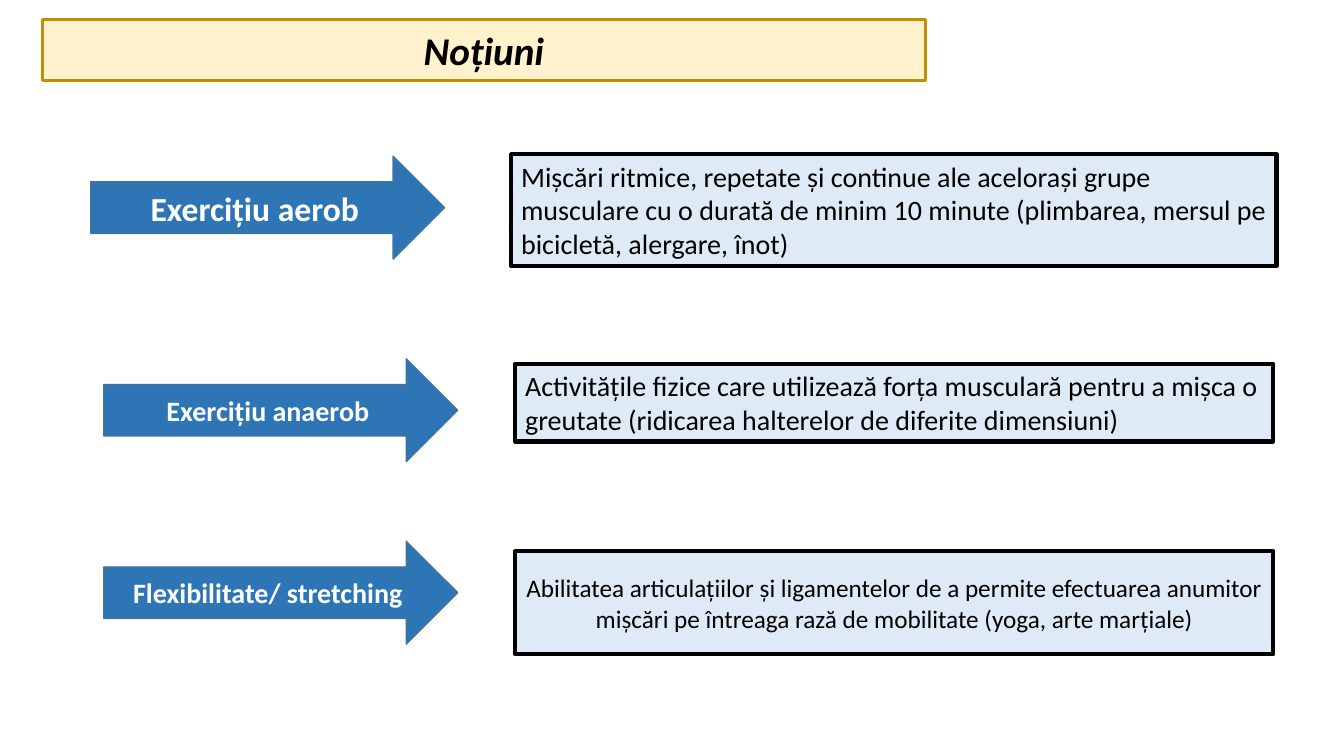
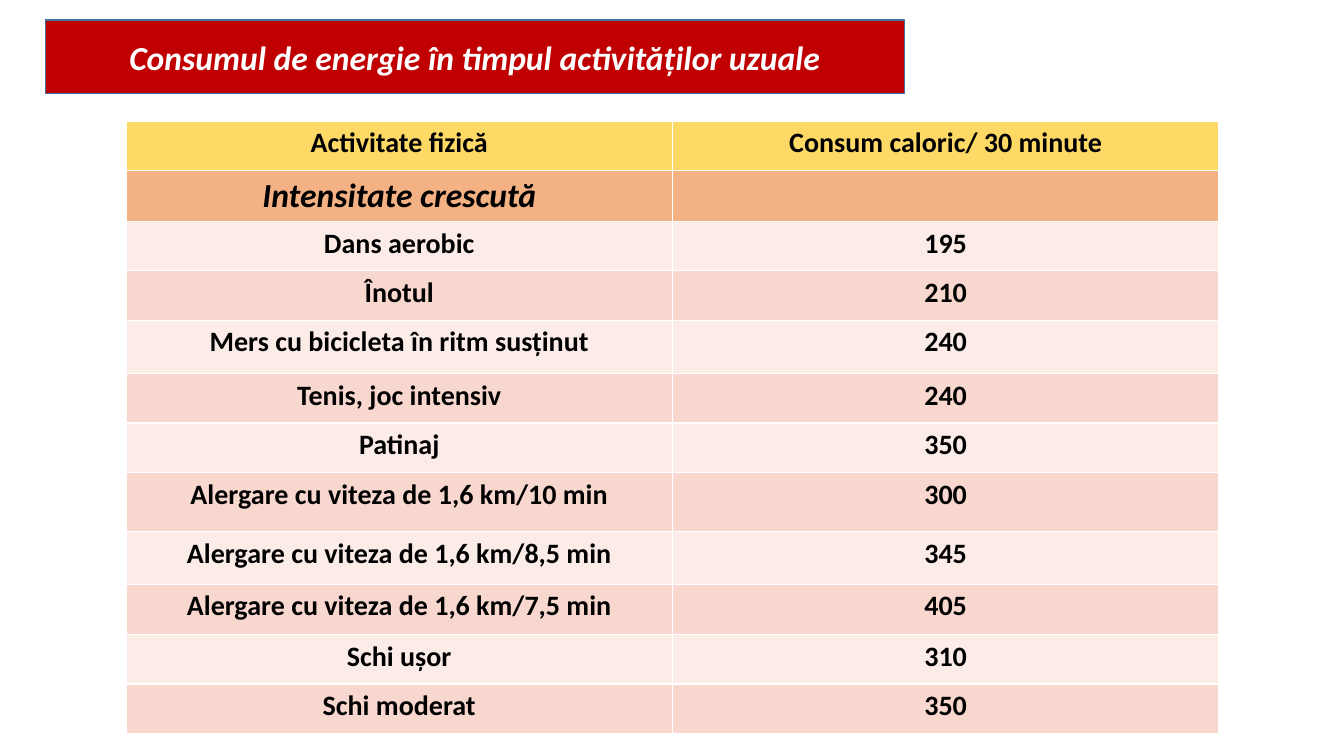
from lxml import etree
from pptx import Presentation
from pptx.dml.color import RGBColor
from pptx.enum.shapes import MSO_SHAPE
from pptx.enum.text import MSO_ANCHOR, MSO_AUTO_SIZE, PP_ALIGN
from pptx.oxml.ns import qn
from pptx.util import Pt

PX = 9144
FONT = "Calibri"
ARROW, RECT = MSO_SHAPE.RIGHT_ARROW, MSO_SHAPE.RECTANGLE
TOP, MIDDLE = MSO_ANCHOR.TOP, MSO_ANCHOR.MIDDLE
LEFT, CENTER = PP_ALIGN.LEFT, PP_ALIGN.CENTER
FIXED = MSO_AUTO_SIZE.NONE

BLACK = RGBColor(0x00, 0x00, 0x00)
WHITE = RGBColor(0xFF, 0xFF, 0xFF)
BLUE = RGBColor(0x2E, 0x75, 0xB6)
EDGE = RGBColor(0x43, 0x73, 0x9E)
PALE = RGBColor(0xDE, 0xEB, 0xF7)
CREAM = RGBColor(0xFF, 0xF2, 0xCC)
GOLD = RGBColor(0xBF, 0x90, 0x00)
RED = RGBColor(0xC0, 0x00, 0x00)
YELLOW = RGBColor(0xFF, 0xD9, 0x66)
ORANGE = RGBColor(0xF4, 0xB1, 0x83)
LIGHT = RGBColor(0xFC, 0xEC, 0xE8)
ROSE = RGBColor(0xF8, 0xD7, 0xCE)


def write(frame, text, size, color, align=CENTER, bold=True, italic=False):
    frame.text = text
    para = frame.paragraphs[0]
    para.alignment = align
    font = para.font
    font.name, font.size, font.bold, font.italic = FONT, Pt(size), bold, italic
    font.color.rgb = color


def style(shape, fill, line, width, anchor=MIDDLE):
    shape.fill.solid()
    shape.fill.fore_color.rgb = fill
    shape.line.color.rgb = line
    shape.line.width = Pt(width)
    shape.shadow.inherit = False
    frame = shape.text_frame
    frame.word_wrap = True
    frame.auto_size = FIXED
    frame.vertical_anchor = anchor


deck = Presentation()
deck.slide_width, deck.slide_height = 1333 * PX, 750 * PX

titles = [
    ("Noțiuni", (42, 19, 876, 61), 28, BLACK, CREAM, GOLD, 2.25),
    ("Consumul de energie în timpul activităților uzuale",
     (45, 20, 852, 73), 24, WHITE, RED, EDGE, 1),
]
slides = []
for text, place, size, color, fill, line, width in titles:
    slide = deck.slides.add_slide(deck.slide_layouts[5])
    title = slide.shapes.title
    title.left, title.top, title.width, title.height = [n * PX for n in place]
    geom = etree.Element(qn("a:prstGeom"), prst="roundRect")
    etree.SubElement(geom, qn("a:avLst"))
    title.element.spPr.insert(1, geom)
    style(title, fill, line, width)
    write(title.text_frame, text, size, color, italic=True)
    slides.append(slide)
terms, energy = slides

pairs = [
    ("Exercițiu aerob", 24, (90, 155),
     "Mișcări ritmice, repetate și continue ale acelorași grupe musculare cu o "
     "durată de minim 10 minute (plimbarea, mersul pe bicicletă, alergare, înot)",
     20, (507, 153, 759, 111), LEFT, TOP),
    ("Exercițiu anaerob", 20, (103, 356),
     "Activitățile fizice care utilizează forța musculară pentru a mișca o "
     "greutate (ridicarea halterelor de diferite dimensiuni)",
     20, (511, 361, 752, 77), LEFT, TOP),
    ("Flexibilitate/ stretching", 20, (103, 537),
     "Abilitatea articulațiilor și ligamentelor de a permite efectuarea anumitor "
     "mișcări pe întreaga rază de mobilitate (yoga, arte marțiale)",
     18, (511, 547, 752, 102), CENTER, MIDDLE),
]
for name, big, spot, text, size, place, align, anchor in pairs:
    arrow = terms.shapes.add_shape(ARROW, *[n * PX for n in (*spot, 351, 102)])
    style(arrow, BLUE, EDGE, 1)
    write(arrow.text_frame, name, big, WHITE)
    box = terms.shapes.add_shape(RECT, *[n * PX for n in place])
    style(box, PALE, BLACK, 3, anchor)
    write(box.text_frame, text, size, BLACK, align, bold=False)

rows = [
    ("Activitate fizică", "Consum caloric/ 30 minute", 49),
    ("Intensitate crescută", "", 49),
    ("Dans aerobic", "195", 49),
    ("Înotul", "210", 49),
    ("Mers cu bicicleta în ritm susținut", "240", 53),
    ("Tenis, joc intensiv", "240", 49),
    ("Patinaj", "350", 49),
    ("Alergare cu viteza de 1,6 km/10 min", "300", 59),
    ("Alergare cu viteza de 1,6 km/8,5 min", "345", 52),
    ("Alergare cu viteza de 1,6 km/7,5 min", "405", 50),
    ("Schi ușor", "310", 49),
    ("Schi moderat", "350", 49),
]
high = sum(row[2] for row in rows)
table = energy.shapes.add_table(
    len(rows), 2, 125 * PX, 120 * PX, 1084 * PX, high * PX).table
for r, (sport, burn, tall) in enumerate(rows):
    table.rows[r].height = tall * PX
    fill = (YELLOW, ORANGE)[r] if r < 2 else (LIGHT, ROSE)[r % 2]
    for c, text in enumerate((sport, burn)):
        cell = table.cell(r, c)
        cell.fill.solid()
        cell.fill.fore_color.rgb = fill
        write(cell.text_frame, text, 24 if r == 1 else 20, BLACK, italic=r == 1)

deck.save("out.pptx")
